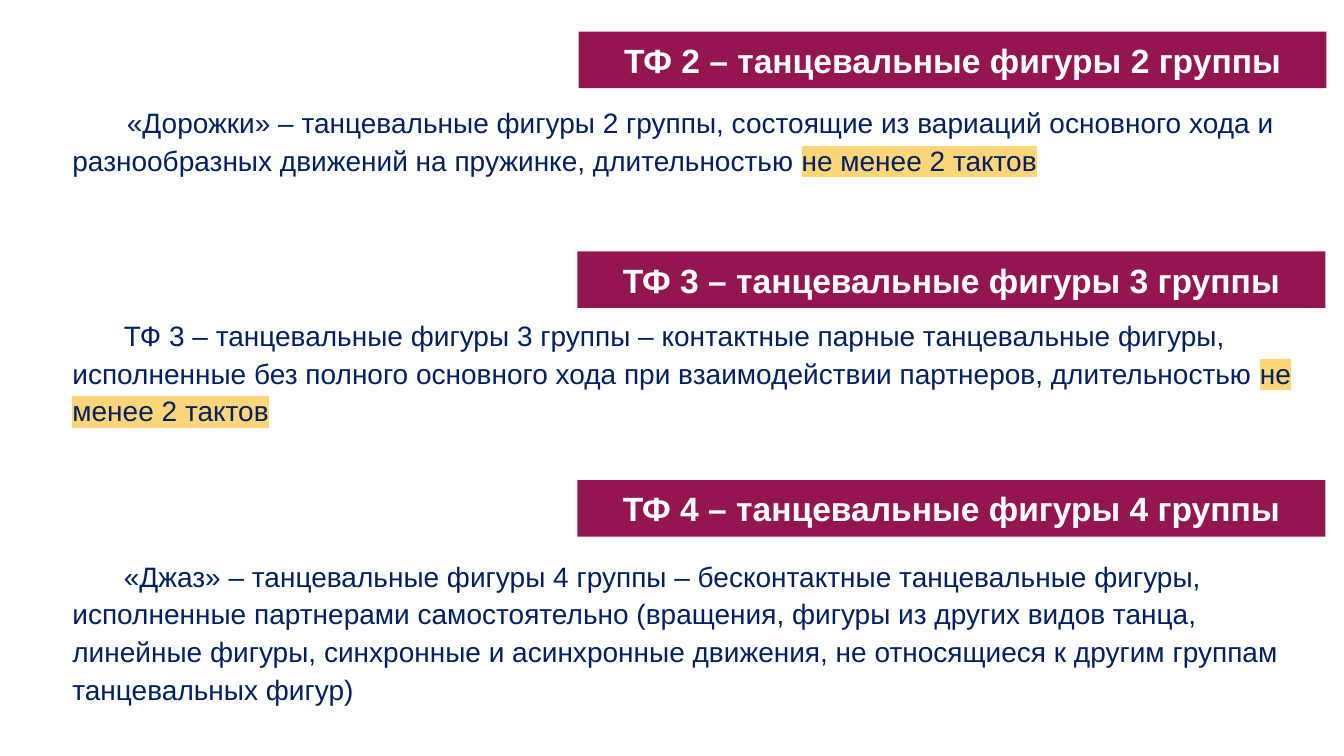
import pptx
import pptx.dml.color
import pptx.enum.shapes
import pptx.enum.text
import pptx.oxml
import pptx.oxml.ns
import pptx.util

Pt = pptx.util.Pt
NAVY, WHITE, MAROON, YELLOW = "002060", "FFFFFF", "941651", "FFD579"
DURATION = "не менее 2 тактов"

# banner left and top, body top and height, first-line indent, group, text, highlighted ending
SECTIONS = [
    (413.3, 22.5, 67.7, 63.4, 38.9, 2,
     "«Дорожки» – танцевальные фигуры 2 группы, состоящие из вариаций "
     "основного хода и разнообразных движений на пружинке, длительностью ",
     DURATION),
    (412.5, 179.5, 220.3, 89.3, 36.7, 3,
     "ТФ 3 – танцевальные фигуры 3 группы – контактные парные танцевальные "
     "фигуры, исполненные без полного основного хода при взаимодействии "
     "партнеров, длительностью ",
     DURATION),
    (412.5, 342.9, 398.9, 103, 36.7, 4,
     "«Джаз» – танцевальные фигуры 4 группы – бесконтактные танцевальные "
     "фигуры, исполненные партнерами самостоятельно (вращения, фигуры из "
     "других видов танца, линейные фигуры, синхронные и асинхронные движения, "
     "не относящиеся к другим группам танцевальных фигур)",
     ""),
]


def rgb(color):
    return pptx.dml.color.RGBColor.from_string(color)


def set_font(p, size, color, bold=False):
    p.font.name = "Arial"
    p.font.size = Pt(size)
    p.font.bold = bold
    p.font.color.rgb = rgb(color)


def highlight(r, color):
    ns = pptx.oxml.ns.nsdecls("a")
    r._r.get_or_add_rPr().append(pptx.oxml.parse_xml(
        f'<a:highlight {ns}><a:srgbClr val="{color}"/></a:highlight>'))


def add_banner(slide, left, top, text):
    sp = slide.shapes.add_shape(pptx.enum.shapes.MSO_SHAPE.RECTANGLE,
                                Pt(left), Pt(top), Pt(534.2), Pt(40.5))
    sp.shadow.inherit = False
    sp.fill.solid()
    sp.fill.fore_color.rgb = rgb(MAROON)
    sp.line.fill.background()
    tf = sp.text_frame
    tf.word_wrap = True
    tf.vertical_anchor = pptx.enum.text.MSO_ANCHOR.MIDDLE
    p = tf.paragraphs[0]
    p.text = text
    p.alignment = pptx.enum.text.PP_ALIGN.CENTER
    set_font(p, 24, WHITE, bold=True)


def add_body(slide, top, height, indent, text, ending):
    sp = slide.shapes.add_textbox(Pt(36.7), Pt(top), Pt(910.8), Pt(height))
    tf = sp.text_frame
    tf.word_wrap = True
    tf.vertical_anchor = pptx.enum.text.MSO_ANCHOR.MIDDLE
    p = tf.paragraphs[0]
    pPr = p._p.get_or_add_pPr()
    pPr.set("marL", str(Pt(7.9)))
    pPr.set("indent", str(Pt(indent)))
    p.line_spacing = 1.12
    p.space_after = Pt(0.5)
    set_font(p, 20, NAVY)
    p.add_run().text = text
    if ending:
        r = p.add_run()
        r.text = ending
        highlight(r, YELLOW)


def main():
    prs = pptx.Presentation()
    prs.slide_width, prs.slide_height = Pt(960), Pt(540)
    slide = prs.slides.add_slide(prs.slide_layouts[6])
    for left, banner_top, top, height, indent, group, text, ending in SECTIONS:
        add_body(slide, top, height, indent, text, ending)
        add_banner(slide, left, banner_top,
                   f"ТФ {group} – танцевальные фигуры {group} группы")
    prs.save("out.pptx")


if __name__ == "__main__":
    main()
